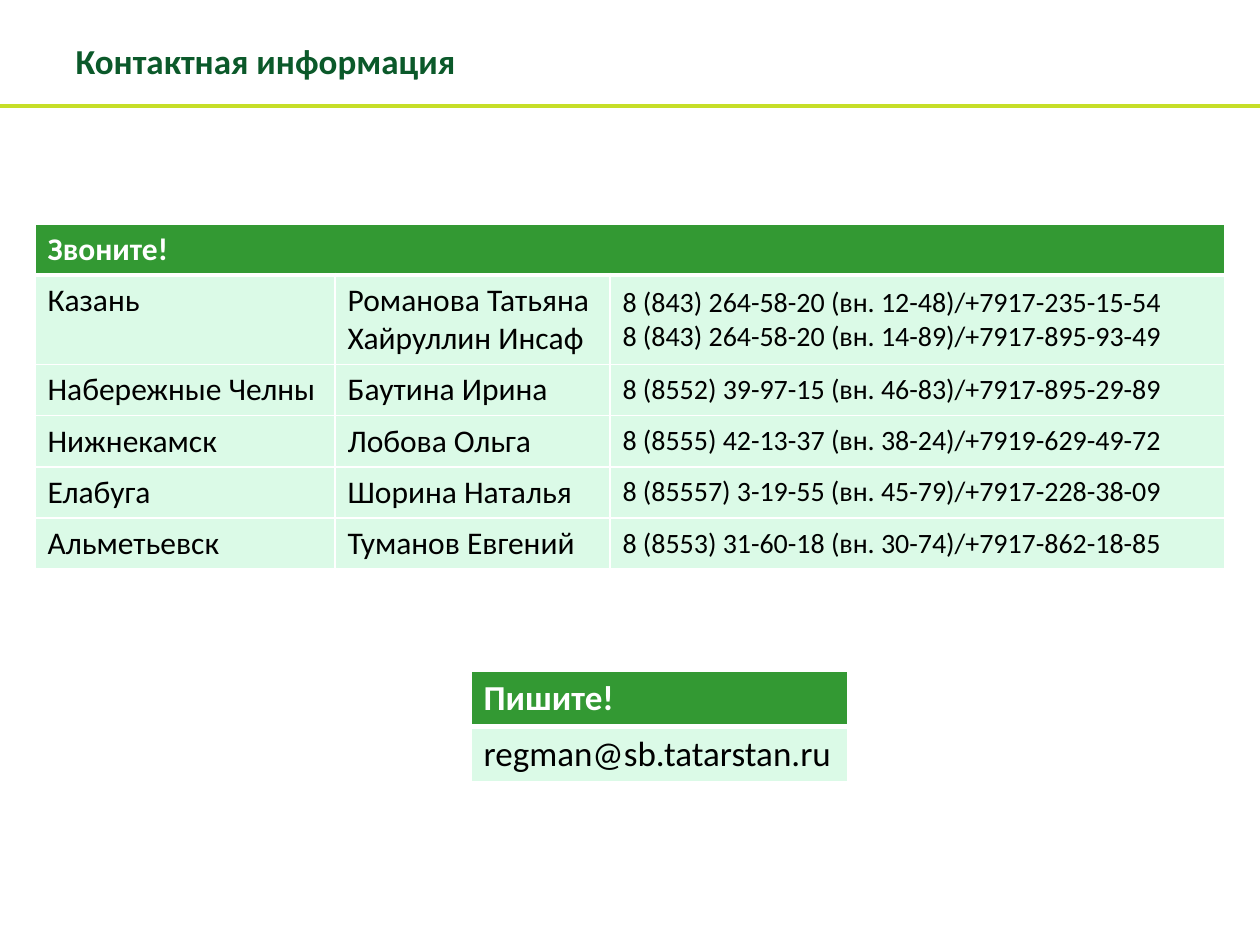
import pptx
import pptx.util
import pptx.dml.color
import pptx.enum.text
import pptx.enum.shapes
import pptx.oxml
import pptx.oxml.ns
from dataclasses import dataclass

SCALE = 914400 // 126  # EMU in one px
ANCHOR = pptx.enum.text.MSO_ANCHOR


@dataclass(frozen=True)
class Theme:
    font: str = "Calibri"
    title: str = "0B592A"
    rule: str = "C6DE27"
    head: str = "339933"
    body: str = "DBFAE7"
    white: str = "FFFFFF"
    black: str = "000000"
    large: int = 20
    normal: int = 18
    small: int = 16


THEME = Theme()

CALLS = [
    ["Звоните!", "", ""],
    ["Казань", "Романова Татьяна\nХайруллин Инсаф",
     "8 (843) 264-58-20 (вн. 12-48)/+7917-235-15-54\n"
     "8 (843) 264-58-20 (вн. 14-89)/+7917-895-93-49"],
    ["Набережные Челны", "Баутина Ирина",
     "8 (8552) 39-97-15 (вн. 46-83)/+7917-895-29-89"],
    ["Нижнекамск", "Лобова Ольга",
     "8 (8555) 42-13-37 (вн. 38-24)/+7919-629-49-72"],
    ["Елабуга", "Шорина Наталья",
     "8 (85557) 3-19-55 (вн. 45-79)/+7917-228-38-09"],
    ["Альметьевск", "Туманов Евгений",
     "8 (8553) 31-60-18 (вн. 30-74)/+7917-862-18-85"],
]
MAIL = [["Пишите!"], ["regman@sb.tatarstan.ru"]]


def px(count):
    return pptx.util.Emu(count * SCALE)


def rgb(code):
    return pptx.dml.color.RGBColor.from_string(code)


def write(frame, text, size, color, bold=False):
    """Put each line of text in its own paragraph."""
    for i, line in enumerate(text.split("\n")):
        para = frame.paragraphs[0] if i == 0 else frame.add_paragraph()
        para.alignment = pptx.enum.text.PP_ALIGN.LEFT
        run = para.add_run()
        run.text = line
        font = run.font
        font.name, font.size, font.bold = THEME.font, pptx.util.Pt(size), bold
        font.color.rgb = rgb(color)


def edge(cell, top, bottom):
    """Draw white cell borders; top and bottom widths are in points."""
    props = cell._tc.get_or_add_tcPr()
    sides = {"lnL": 1, "lnR": 1, "lnT": top, "lnB": bottom}
    for i, (side, width) in enumerate(sides.items()):
        props.insert(i, pptx.oxml.parse_xml(
            f'<a:{side} {pptx.oxml.ns.nsdecls("a")} w="{pptx.util.Pt(width)}">'
            f'<a:solidFill><a:srgbClr val="{THEME.white}"/></a:solidFill>'
            f'</a:{side}>'))


def add_title(slide, text):
    title = slide.shapes.title
    title.left, title.top = px(63), px(26)
    title.width, title.height = px(944), px(68)
    title.text_frame.vertical_anchor = ANCHOR.MIDDLE
    write(title.text_frame, text, THEME.large, THEME.title, True)


def add_rule(slide, y, width):
    kind = pptx.enum.shapes.MSO_CONNECTOR.STRAIGHT
    rule = slide.shapes.add_connector(kind, 0, px(y), px(width), px(y))
    rule.line.color.rgb = rgb(THEME.rule)
    rule.line.width = pptx.util.Pt(2)
    rule._element.spPr.append(pptx.oxml.parse_xml(
        f'<a:effectLst {pptx.oxml.ns.nsdecls("a")}/>'))


def add_grid(slide, data, left, top, cols, rows, sizes):
    """Add a table with one header row; sizes holds a type size per column."""
    grid = slide.shapes.add_table(
        len(rows), len(cols), px(left), px(top),
        px(sum(cols)), px(sum(rows))).table
    for col, width in zip(grid.columns, cols):
        col.width = px(width)
    for row, height in zip(grid.rows, rows):
        row.height = px(height)
    for r, line in enumerate(data):
        head = r == 0
        for c, text in enumerate(line):
            cell = grid.cell(r, c)
            cell.fill.solid()
            cell.fill.fore_color.rgb = rgb(THEME.head if head else THEME.body)
            edge(cell, 3 if r == 1 else 1, 3 if head else 1)
            # Phone numbers sit mid-cell
            cell.vertical_anchor = (
                ANCHOR.MIDDLE if c == 2 and not head else ANCHOR.TOP)
            if text:
                write(cell.text_frame, text, sizes[c],
                      THEME.white if head else THEME.black, head)
    if len(cols) > 1:
        grid.cell(0, 0).merge(grid.cell(0, len(cols) - 1))


def main():
    deck = pptx.Presentation()
    deck.slide_width, deck.slide_height = px(1260), px(945)
    slide = deck.slides.add_slide(deck.slide_layouts[5])

    # Heading
    add_rule(slide, 106, 1260)
    add_title(slide, "Контактная информация")

    # Phone contacts
    add_grid(slide, CALLS, 35, 224, [300, 275, 615],
             [51, 89] + [51] * 4, [THEME.normal, THEME.normal, THEME.small])

    # E-mail contact
    add_grid(slide, MAIL, 471, 671, [377], [55, 55], [THEME.large])

    deck.save("out.pptx")


if __name__ == "__main__":
    main()
